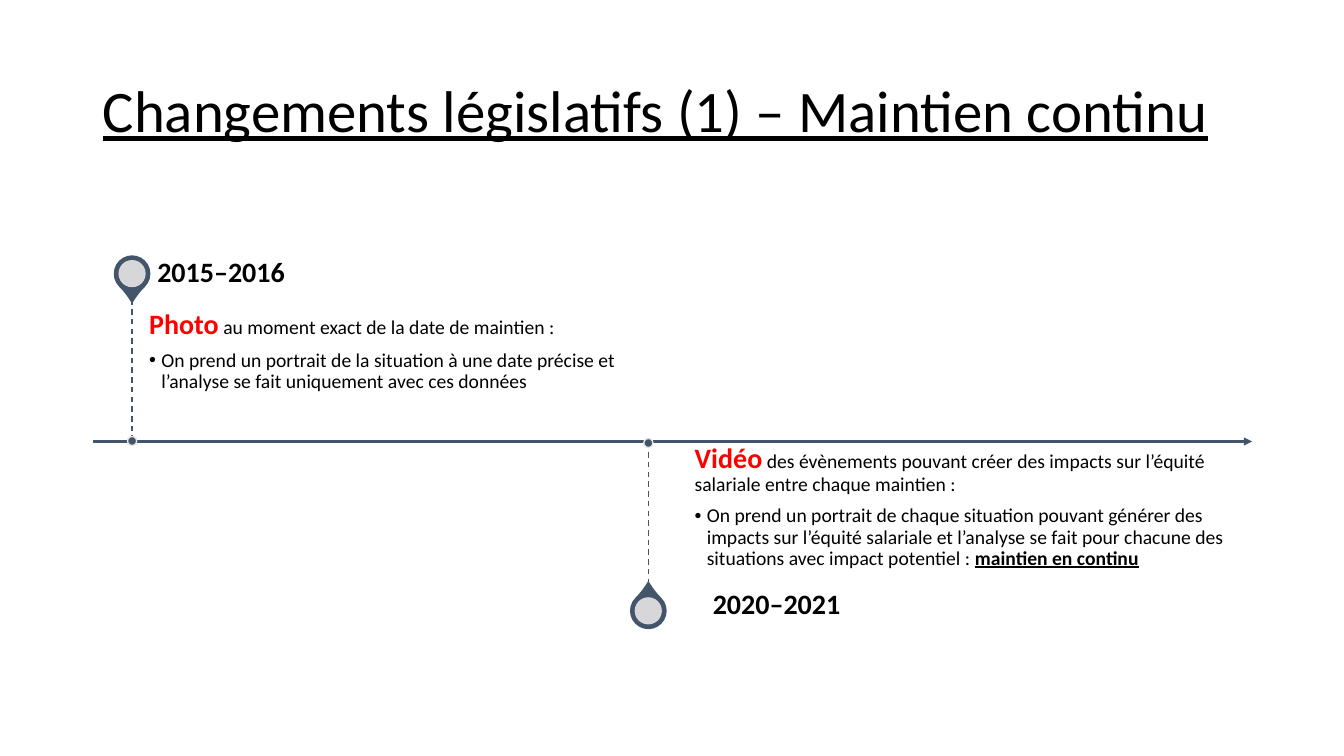
from lxml.etree import SubElement
from pptx import Presentation
from pptx.dml.color import RGBColor
from pptx.enum.dml import MSO_LINE
from pptx.enum.shapes import MSO_CONNECTOR, MSO_SHAPE
from pptx.enum.text import MSO_ANCHOR
from pptx.oxml.ns import qn
from pptx.util import Inches, Pt

THEME = {
    "font": "Calibri",
    "line": RGBColor(0x44, 0x54, 0x6A),
    "pale": RGBColor(0xE7, 0xE6, 0xE6),
    "text": RGBColor(0, 0, 0),
    "accent": RGBColor(0xFF, 0, 0),
    "title": Pt(42),
    "head": Pt(20),
    "body": Pt(14),
}
STYLES = {
    "title": {"size": THEME["title"], "color": THEME["text"], "underline": True},
    "date": {"size": THEME["head"], "color": THEME["text"], "bold": True},
    "key": {"size": THEME["head"], "color": THEME["accent"], "bold": True},
    "body": {"size": THEME["body"], "color": THEME["text"], "bold": False},
    "stress": {"size": THEME["body"], "color": THEME["text"], "bold": True, "underline": True},
}

TITLE = [[("Changements législatifs (1) – Maintien continu", "title")]]
AXIS = {"left": 0.92, "right": 12.42, "y": 4.38}
PIN, HEAD, DOT = 0.35, 0.27, 0.09
MILESTONES = [
    {
        "x": 1.31, "pin_y": 2.715, "turn": 135, "stem": (2.97, 4.38), "dot_y": 4.375,
        "date": "2015–2016", "date_box": (1.56, 2.47, 3.51, 0.49),
        "box": (1.48, 2.94, 4.78, 1.41), "insets": (0, 0.14, 0, 0.21),
        "anchor": MSO_ANCHOR.TOP,
        "lead": [("Photo", "key"), (" au moment exact de la date de maintien :", "body")],
        "bullet": [("On prend un portrait de la situation à une date précise et "
                    "l’analyse se fait uniquement avec ces données", "body")],
    },
    {
        "x": 6.43, "pin_y": 6.06, "turn": 315, "stem": (4.39, 5.8), "dot_y": 4.395,
        "date": "2020–2021", "date_box": (7.07, 5.76, 3.5, 0.49),
        "box": (6.89, 4.38, 5.53, 1.41), "insets": (0, 0.21, 0.14, 0.14),
        "anchor": MSO_ANCHOR.BOTTOM,
        "lead": [("Vidéo", "key"),
                 (" des évènements pouvant créer des impacts sur l’équité "
                  "salariale entre chaque maintien :", "body")],
        "bullet": [("On prend un portrait de chaque situation pouvant générer des impacts "
                    "sur l’équité salariale et l’analyse se fait pour chacune des "
                    "situations avec impact potentiel : ", "body"),
                   ("maintien en continu", "stress")],
    },
]


def add_text(s, box, paragraphs, insets, anchor=MSO_ANCHOR.MIDDLE):
    tf = s.shapes.add_textbox(*map(Inches, box)).text_frame
    sides = ("margin_left", "margin_top", "margin_right", "margin_bottom")
    frame = {"word_wrap": True, "vertical_anchor": anchor, **dict(zip(sides, map(Inches, insets)))}
    for name, value in frame.items():
        setattr(tf, name, value)
    for i, runs in enumerate(paragraphs):
        p = tf.add_paragraph() if i else tf.paragraphs[0]
        p.line_spacing = 0.9
        p.space_after = Pt(2 if i else 7)
        if i:
            pPr = p._p.get_or_add_pPr()
            pPr.set("marL", str(Inches(0.12)))
            pPr.set("indent", str(-Inches(0.12)))
            SubElement(pPr, qn("a:buFont"), typeface="Arial")
            SubElement(pPr, qn("a:buChar"), char="•")
        for text, style in runs:
            r = p.add_run()
            r.text = text
            r.font.name = THEME["font"]
            for name, value in STYLES[style].items():
                if name == "color":
                    r.font.color.rgb = value
                else:
                    setattr(r.font, name, value)


def add_line(s, start, end, width, dash=None):
    ln = s.shapes.add_connector(MSO_CONNECTOR.STRAIGHT, *map(Inches, start + end))
    ln.line.color.rgb = THEME["line"]
    ln.line.width = Pt(width)
    if dash:
        ln.line.dash_style = dash
    SubElement(ln._element.spPr, qn("a:effectLst"))
    return ln


def add_round(s, kind, x, y, size, fill, outline=None):
    sp = s.shapes.add_shape(kind, *map(Inches, (x - size / 2, y - size / 2, size, size)))
    sp.shadow.inherit = False
    sp.fill.solid()
    sp.fill.fore_color.rgb = fill
    if outline is None:
        sp.line.fill.background()
    else:
        sp.line.color.rgb = outline
        sp.line.width = Pt(1)
    return sp


def add_milestone(s, m):
    x = m["x"]
    pin = add_round(s, MSO_SHAPE.TEAR, x, m["pin_y"], PIN, THEME["line"], THEME["line"])
    pin.adjustments[0] = 1.15
    pin.rotation = m["turn"]
    head = add_round(s, MSO_SHAPE.OVAL, x, m["pin_y"], HEAD, THEME["pale"])
    color = head._element.spPr.find(qn("a:solidFill"))[0]
    SubElement(color, qn("a:alpha"), val="90000")
    add_text(s, m["box"], [m["lead"], m["bullet"]], m["insets"], m["anchor"])
    add_text(s, m["date_box"], [[(m["date"], "date")]], (0, 0, 0.14, 0))
    top, bottom = m["stem"]
    add_line(s, (x, top), (x, bottom), 1, MSO_LINE.DASH)
    add_round(s, MSO_SHAPE.OVAL, x, m["dot_y"], DOT, THEME["line"], THEME["pale"])


def main():
    prs = Presentation()
    prs.slide_width, prs.slide_height = Inches(13.33), Inches(7.5)
    s = prs.slides.add_slide(prs.slide_layouts[6])
    add_text(s, (0.92, 0.4, 11.5, 1.45), TITLE, (0.1, 0.05, 0.1, 0.05))
    axis = add_line(s, (AXIS["left"], AXIS["y"]), (AXIS["right"], AXIS["y"]), 1.5)
    SubElement(axis.line._get_or_add_ln(), qn("a:tailEnd"), type="triangle")
    for m in MILESTONES:
        add_milestone(s, m)
    prs.save("out.pptx")


if __name__ == "__main__":
    main()
